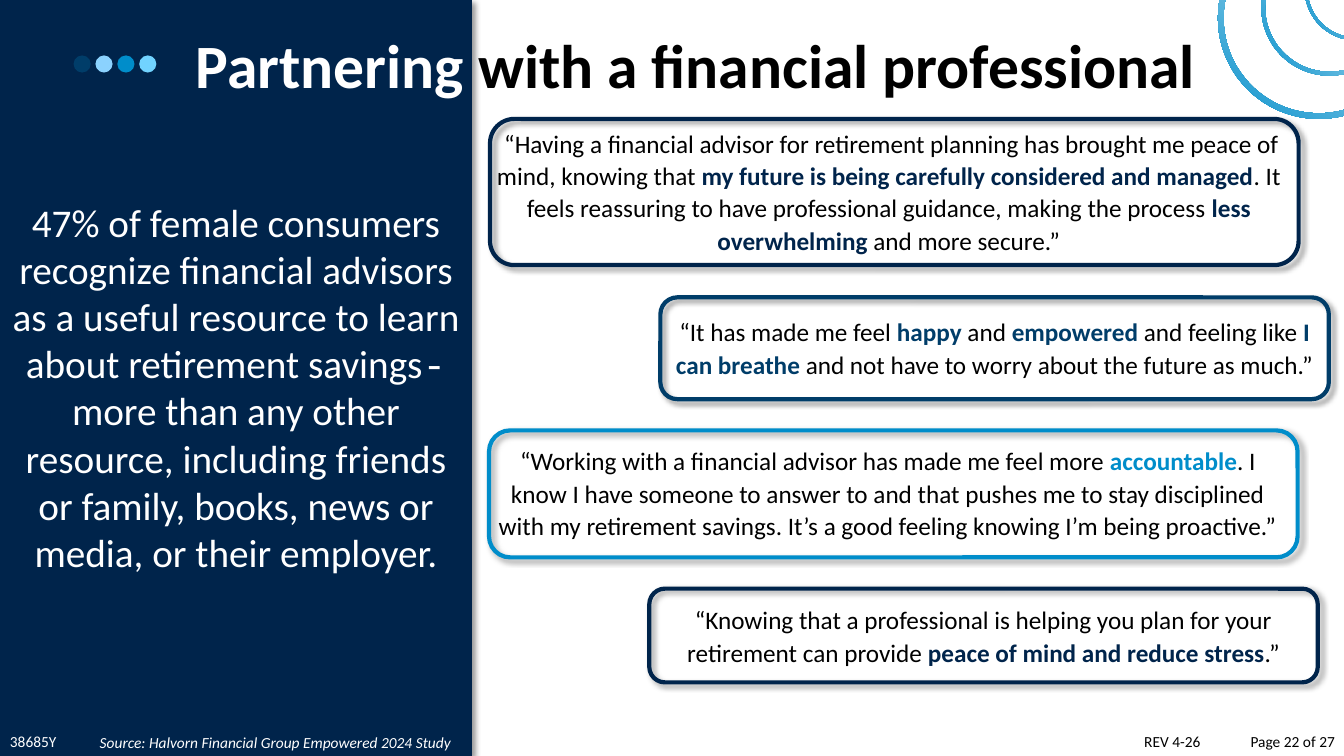
from pptx import Presentation
from pptx.dml.color import RGBColor
from pptx.enum.shapes import MSO_SHAPE as Shape
from pptx.enum.text import MSO_AUTO_SIZE as AutoSize, PP_ALIGN as Align
from pptx.oxml import parse_xml
from pptx.oxml.ns import nsdecls
from pptx.util import Inches, Pt

COLORS = {"navy": "00244B", "deep": "003D69", "blue": "008DCA", "sky": "8BD2FE",
          "cyan": "71D3FF", "white": "FFFFFF", "black": "000000"}

TITLE = [("Partnering", {"color": "white"}), (" with a financial professional", {})]
STATISTIC = [
    ("47% of female consumers recognize financial advisors as a useful resource "
     "to learn about retirement savings", {}),
    ("-", {"font": "Courier New"}),
    ("more than any other resource, including friends or family, books, news or "
     "media, or their employer.", {}),
]
QUOTES = [
    {"frame": (4.85, 4.27, 8.02, 1.26), "text": (4.8, 4.35, 8.01, 1.06), "color": "blue",
     "parts": ["“Working with a financial advisor has made me feel more ", "accountable",
               ". I know I have someone to answer to and that pushes me to stay disciplined "
               "with my retirement savings. It’s a good feeling knowing I’m being proactive.”"]},
    {"frame": (6.55, 2.95, 6.63, 1.01), "text": (6.55, 3.07, 6.63, 0.73), "color": "deep",
     "parts": ["“It has made me feel ", "happy", " and ", "empowered", " and feeling like ",
               "I can breathe ", "and not have to worry about the future as much.”"]},
    {"frame": (4.86, 1.18, 8.02, 1.45), "text": (4.8, 1.2, 8.03, 1.38), "color": "navy",
     "parts": [" “Having a financial advisor for retirement planning has brought me peace of "
               "mind, knowing that ", "my future is being carefully considered and managed",
               ". It feels reassuring to have professional guidance, making the process ",
               "less overwhelming ", "and more secure.”"]},
    {"frame": (6.44, 5.84, 6.63, 0.93), "text": (6.44, 5.93, 6.63, 0.73), "color": "navy",
     "parts": ["“Knowing that a professional is helping you plan for your retirement can "
               "provide ", "peace of mind and reduce stress", ".”"]},
]
FOOTERS = [
    ("REV 4-26", (11.25, 7.21, 2.09, 0.29), {}),
    ("38685Y", (0, 7.21, 1.89, 0.29), {"color": "white"}),
    ("Source: Halvorn Financial Group Empowered 2024 Study", (0.89, 7.21, 6.82, 0.29),
     {"color": "white", "italic": True, "spacing": 1.07}),
    ("Page 22 of 27", (12.27, 7.21, 1.07, 0.29), {"align": Align.RIGHT}),
]
ARCS = [(12.08, -0.82, 2, 351.9), (12.94, -0.62, 1.02, 13.5), (12.51, -0.6, 1.35, 9.2)]
ARC_ADJUSTMENTS = (212.7, 172.905, 0.028)
DOTS = ["deep", "sky", "blue", "cyan"]
DOT_LEFT, DOT_TOP, DOT_SIZE, DOT_STEP = 0.73, 0.55, 0.17, 0.217


def rgb(name):
    return RGBColor.from_string(COLORS[name])


def add_text(page, place, runs, size=18, color="black", bold=False, italic=False,
             align=Align.LEFT, spacing=None):
    box = page.shapes.add_textbox(*map(Inches, place))
    frame = box.text_frame
    frame.word_wrap = True
    frame.auto_size = AutoSize.SHAPE_TO_FIT_TEXT
    para = frame.paragraphs[0]
    para.alignment = align
    if spacing:
        para.line_spacing = spacing
        para.space_after = Pt(8)
    for text, style in runs:
        span = para.add_run()
        span.text = text
        span.font.name = style.get("font", "Calibri")
        span.font.size = Pt(size)
        span.font.bold = style.get("bold", bold)
        span.font.italic = italic
        span.font.color.rgb = rgb(style.get("color", color))


def add_figure(page, kind, place, fill=None, line=None, shadow=False):
    figure = page.shapes.add_shape(kind, *map(Inches, place))
    figure.shadow.inherit = False
    if fill:
        figure.fill.solid()
        figure.fill.fore_color.rgb = rgb(fill)
    else:
        figure.fill.background()
    if line:
        figure.line.color.rgb = rgb(line)
        figure.line.width = Pt(3)
    else:
        figure.line.fill.background()
    if shadow:
        effects = figure._element.spPr.find(
            "{http://schemas.openxmlformats.org/drawingml/2006/main}effectLst")
        effects.append(parse_xml(
            f'<a:outerShdw {nsdecls("a")} blurRad="{Pt(4)}" dist="{Pt(3)}" dir="2700000" '
            f'algn="tl" rotWithShape="0"><a:srgbClr val="{COLORS["black"]}">'
            '<a:alpha val="40000"/></a:srgbClr></a:outerShdw>'))
    return figure


def add_arc(page, left, top, size, rotation):
    arc = add_figure(page, Shape.BLOCK_ARC, (left, top, size, size))
    arc.rotation = rotation
    for index, value in enumerate(ARC_ADJUSTMENTS):
        arc.adjustments[index] = value
    arc.fill.gradient()
    arc.fill.gradient_angle = 45
    for stop, name, position in zip(arc.fill.gradient_stops, ("blue", "white"), (0.01, 1)):
        stop.color.rgb = rgb(name)
        stop.position = position


def main():
    deck = Presentation()
    deck.slide_width, deck.slide_height = Inches(13.33), Inches(7.5)
    page = deck.slides.add_slide(deck.slide_layouts[6])

    add_figure(page, Shape.RECTANGLE, (0, 0, 4.68, 7.5), fill="navy", shadow=True)
    for arc in ARCS:
        add_arc(page, *arc)
    add_text(page, (0, 1.92, 4.68, 3.87), STATISTIC, size=28, color="white",
             align=Align.CENTER)
    for quote in QUOTES:
        emphasis = {"bold": True, "color": quote["color"]}
        runs = [(part, emphasis if index % 2 else {})
                for index, part in enumerate(quote["parts"])]
        add_text(page, quote["text"], runs, align=Align.CENTER, spacing=1.07)
        add_figure(page, Shape.ROUNDED_RECTANGLE, quote["frame"], line=quote["color"],
                   shadow=True)
    add_text(page, (1.84, 0.22, 10.29, 0.84), TITLE, size=44, bold=True)
    for text, place, style in FOOTERS:
        add_text(page, place, [(text, {})], size=11, **style)
    for index, name in enumerate(DOTS):
        add_figure(page, Shape.OVAL,
                   (DOT_LEFT + index * DOT_STEP, DOT_TOP, DOT_SIZE, DOT_SIZE), fill=name)
    deck.save("out.pptx")


if __name__ == "__main__":
    main()
